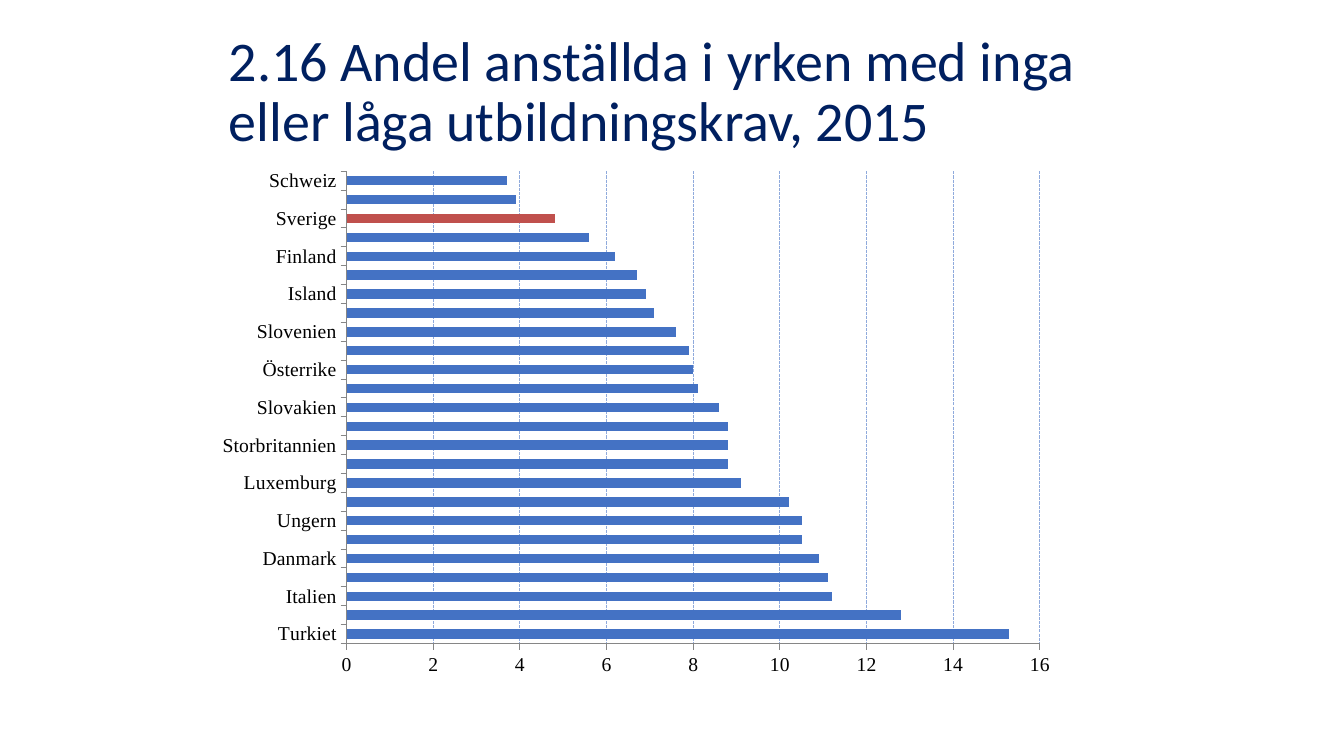
from lxml.etree import SubElement
from pptx import Presentation
from pptx.chart.data import CategoryChartData
from pptx.dml.color import RGBColor
from pptx.enum.chart import XL_CHART_TYPE, XL_TICK_LABEL_POSITION, XL_TICK_MARK
from pptx.enum.dml import MSO_LINE
from pptx.enum.text import MSO_ANCHOR
from pptx.oxml.ns import qn
from pptx.util import Inches, Pt

TITLE = "2.16 Andel anställda i yrken med inga eller låga utbildningskrav, 2015"
SHARES = {
    "Turkiet": 15.3, "Spanien": 12.8, "Italien": 11.2, "Portugal": 11.1,
    "Danmark": 10.9, "Belgien": 10.5, "Ungern": 10.5, "Frankrike": 10.2,
    "Luxemburg": 9.1, "Irland": 8.8, "Storbritannien": 8.8, "Nederländerna": 8.8,
    "Slovakien": 8.6, "Tyskland": 8.1, "Österrike": 8, "Estland": 7.9,
    "Slovenien": 7.6, "Grekland": 7.1, "Island": 6.9, "Polen": 6.7,
    "Finland": 6.2, "Tjeckien": 5.6, "Sverige": 4.8, "Norge": 3.9, "Schweiz": 3.7,
}
HIGHLIGHT = "Sverige"
TITLE_AREA = (2.17, 0.3, 8.99, 1.25)
CHART_AREA = (1.94, 1.39, 8.66, 5.43)
PLOT_SHARES = {"x": 0.173, "y": 0.057, "w": 0.794, "h": 0.863}

NAVY = RGBColor(0x00, 0x20, 0x60)
BLUE = RGBColor(0x44, 0x72, 0xC4)
RED = RGBColor(0xC0, 0x50, 0x4D)
GRID_BLUE = RGBColor(0x8F, 0xAA, 0xDC)
GREY = RGBColor(0x86, 0x86, 0x86)
BLACK = RGBColor(0, 0, 0)


def style_font(font, name, size, color):
    font.name, font.size, font.color.rgb = name, Pt(size), color


def add_title(page):
    box = page.shapes.add_textbox(*map(Inches, TITLE_AREA))
    frame = box.text_frame
    frame.word_wrap = True
    frame.vertical_anchor = MSO_ANCHOR.MIDDLE
    frame.text = TITLE
    para = frame.paragraphs[0]
    para.line_spacing = 0.9
    style_font(para.runs[0].font, "Calibri", 40, NAVY)


def place_plot(chart):
    area = chart.element.find(".//" + qn("c:plotArea"))
    for old_layout in area.findall(qn("c:layout")):
        area.remove(old_layout)
    layout = SubElement(area, qn("c:layout"))
    area.insert(0, layout)
    manual = SubElement(layout, qn("c:manualLayout"))
    settings = {"layoutTarget": "inner", "xMode": "edge", "yMode": "edge", **PLOT_SHARES}
    for name, value in settings.items():
        SubElement(manual, qn("c:" + name)).set("val", str(value))


def style_axes(chart):
    countries, shares = chart.category_axis, chart.value_axis
    for axis in (countries, shares):
        axis.major_tick_mark = XL_TICK_MARK.OUTSIDE
        axis.minor_tick_mark = XL_TICK_MARK.NONE
        axis.format.line.color.rgb = GREY
        axis.format.line.width = Pt(0.75)
        style_font(axis.tick_labels.font, "Times New Roman", 14, BLACK)
    countries.tick_label_position = XL_TICK_LABEL_POSITION.LOW
    countries.has_major_gridlines = False
    shares.minimum_scale, shares.maximum_scale, shares.major_unit = 0, 16, 2
    shares.tick_labels.number_format = "0"
    shares.tick_labels.number_format_is_linked = False
    shares.has_major_gridlines = True
    grid = shares.major_gridlines.format.line
    grid.color.rgb, grid.width = GRID_BLUE, Pt(0.75)
    grid.dash_style = MSO_LINE.SQUARE_DOT


def add_share_chart(page):
    data = CategoryChartData()
    data.categories = list(SHARES)
    data.add_series("Series 1", list(SHARES.values()))
    chart = page.shapes.add_chart(
        XL_CHART_TYPE.BAR_STACKED, *map(Inches, CHART_AREA), data).chart
    chart.has_title = chart.has_legend = False
    style_font(chart.font, "Times New Roman", 14, BLACK)
    plot = chart.plots[0]
    plot.gap_width, plot.overlap, plot.vary_by_categories = 100, 100, False
    series = plot.series[0]
    highlight = series.points[list(SHARES).index(HIGHLIGHT)]
    for bars, color in ((series, BLUE), (highlight, RED)):
        bars.format.fill.solid()
        bars.format.fill.fore_color.rgb = color
    style_axes(chart)
    place_plot(chart)


def main():
    """Build the slide on employment in low-qualification occupations."""
    deck = Presentation()
    deck.slide_width, deck.slide_height = Inches(13.33), Inches(7.5)
    page = deck.slides.add_slide(deck.slide_layouts[6])
    add_title(page)
    add_share_chart(page)
    deck.save("out.pptx")


if __name__ == "__main__":
    main()
